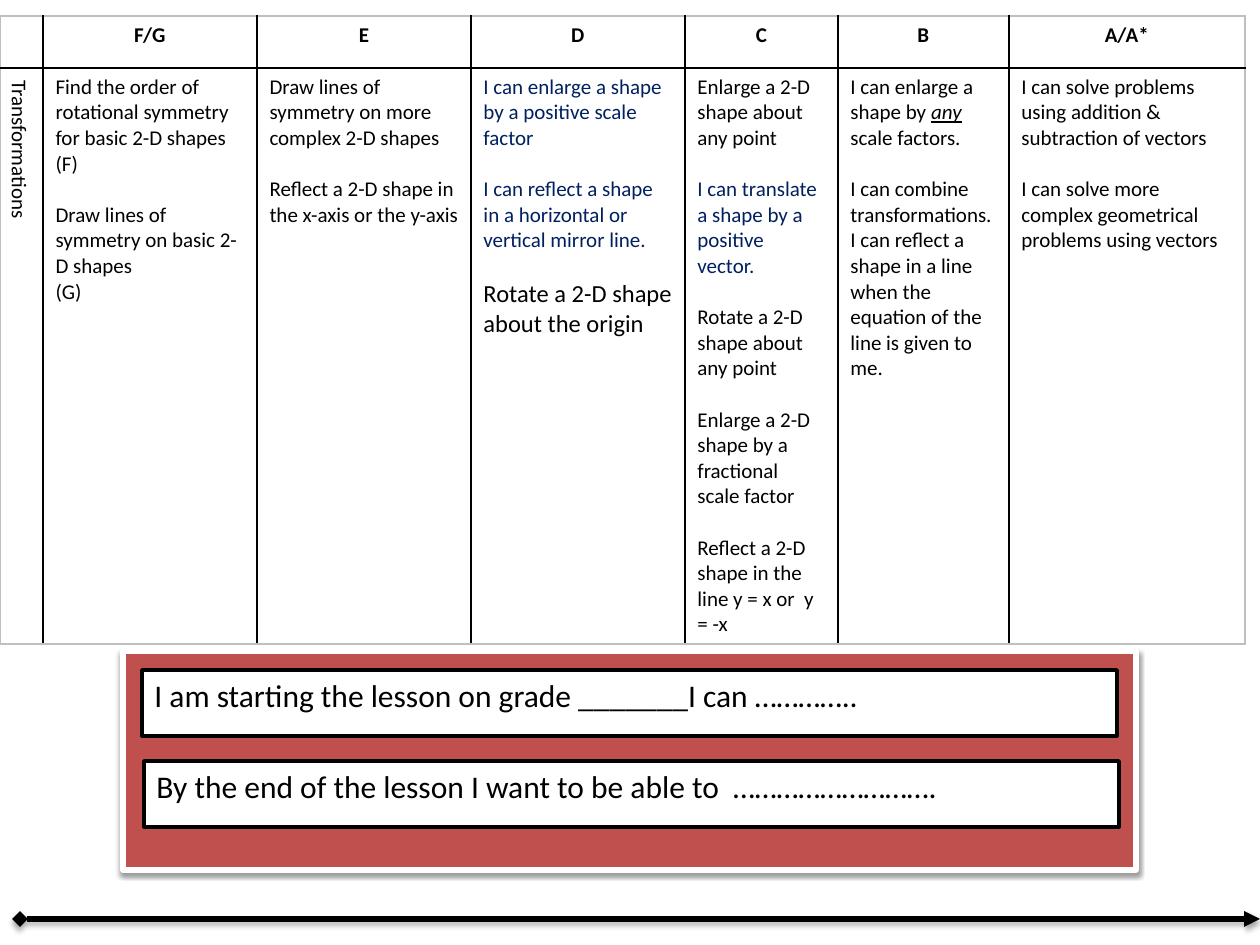
from lxml.etree import SubElement as Sub
from pptx import Presentation
from pptx.dml.color import RGBColor as Rgb
from pptx.enum.shapes import MSO_CONNECTOR as Link, MSO_SHAPE as Shape
from pptx.enum.text import MSO_ANCHOR as Anchor, PP_ALIGN as Align
from pptx.oxml.ns import qn
from pptx.util import Pt

SCALE = 914400 / 126
HUES = {"ink": "000000", "navy": "002060", "white": "FFFFFF",
        "red": "C0504D", "grey": "BFBFBF"}
FONT = "Calibri"
GAP = 14.65  # one line of 12 pt text

WIDTHS = [43, 214, 214, 214, 153, 171, 236]
HEIGHTS = [52, 576]
GRADES = ["", "F/G", "E", "D", "C", "B", "A/A*"]


def navy(text):
    return text, {"hue": "navy"}


# Each cell is a list of blocks, each block a list of lines, each line a list of runs.
GOALS = [
    [[["Transformations"]]],
    [[["Find the order of rotational symmetry for basic 2-D shapes"], ["(F)"]],
     [["Draw lines of symmetry on basic 2-D shapes"], ["(G)"]]],
    [[["Draw lines of symmetry on more complex 2-D shapes"]],
     [["Reflect a 2-D shape in the x-axis or the y-axis"]]],
    [[[navy("I can enlarge a shape by a positive scale factor")]],
     [[navy("I can reflect a shape in a horizontal or vertical mirror line.")]],
     [[("Rotate a 2-D shape about the origin", {"size": 14})]]],
    [[["Enlarge a 2-D shape about any point"]],
     [[navy("I can translate a shape by a positive vector.")]],
     [["Rotate a 2-D shape about any point"]],
     [["Enlarge a 2-D shape by a fractional scale factor"]],
     [["Reflect a 2-D shape in the line y = x or  y = -x"]]],
    [[["I can enlarge a shape by ", ("any", {"slant": True}), " scale factors."]],
     [["I can combine transformations. I can reflect a shape in a line "
       "when the equation of the line is given to me."]]],
    [[["I can solve problems using addition & subtraction of vectors"]],
     [["I can solve more complex geometrical problems using vectors"]]],
]


def px(num):
    return round(num * SCALE)


def tint(hue):
    return Rgb.from_string(HUES[hue])


def shade(item, alpha=0, blur=0, dist=0):
    """Give an item a downward shadow, or none when alpha is 0."""
    box = Sub(item._element.spPr, qn("a:effectLst"))
    if alpha:
        cast = Sub(box, qn("a:outerShdw"), blurRad=str(Pt(blur)),
                   dist=str(Pt(dist)), dir="5400000", rotWithShape="0")
        ink = Sub(cast, qn("a:srgbClr"), val=HUES["ink"])
        Sub(ink, qn("a:alpha"), val=str(alpha * 1000))


class Deck:
    def __init__(self):
        self.show = Presentation()
        self.show.slide_width, self.show.slide_height = px(1260), px(945)
        self.slide = self.show.slides.add_slide(self.show.slide_layouts[6])

    def run(self, para, text, size=12, hue="ink", bold=False, slant=False):
        run = para.add_run()
        run.text = text
        font = run.font
        font.name, font.size, font.bold = FONT, Pt(size), bold
        font.italic = font.underline = slant
        font.color.rgb = tint(hue)

    def fill(self, frame, blocks, align=Align.LEFT, **style):
        """Write blocks of lines, with a gap above every block but the first."""
        para = frame.paragraphs[0]
        for b, block in enumerate(blocks):
            for n, line in enumerate(block):
                if b or n:
                    para = frame.add_paragraph()
                para.alignment = align
                if b and not n:
                    para.space_before = Pt(GAP)
                for part in line:
                    text, more = (part, {}) if isinstance(part, str) else part
                    self.run(para, text, **{**style, **more})

    def edge(self, cell, side, hue):
        line = Sub(cell._tc.get_or_add_tcPr(), qn("a:ln" + side), w=str(Pt(1)))
        Sub(Sub(line, qn("a:solidFill")), qn("a:srgbClr"), val=HUES[hue])

    def table(self, x, y):
        rows, cols = len(HEIGHTS), len(WIDTHS)
        grid = self.slide.shapes.add_table(
            rows, cols, px(x), px(y), px(sum(WIDTHS)), px(sum(HEIGHTS))).table
        grid.first_row = grid.horz_banding = False
        for col, wide in zip(grid.columns, WIDTHS):
            col.width = px(wide)
        for row, high in zip(grid.rows, HEIGHTS):
            row.height = px(high)
        for r in range(rows):
            for c in range(cols):
                cell = grid.cell(r, c)
                outer = {"L": c == 0, "R": c == cols - 1,
                         "T": r == 0, "B": r == rows - 1}
                for side, rim in outer.items():
                    self.edge(cell, side, "grey" if rim else "ink")
                cell.fill.background()
        for c, (grade, goal) in enumerate(zip(GRADES, GOALS)):
            if grade:
                self.fill(grid.cell(0, c).text_frame, [[[grade]]],
                          Align.CENTER, bold=True)
            self.fill(grid.cell(1, c).text_frame, goal)
        grid.cell(1, 0)._tc.get_or_add_tcPr().set("vert", "vert")

    def arrow(self, x1, y1, x2, y2):
        line = self.slide.shapes.add_connector(
            Link.STRAIGHT, px(x1), px(y1), px(x2), px(y2))
        line.line.width = Pt(3)
        line.line.color.rgb = tint("ink")
        ends = line.line._get_or_add_ln()
        Sub(ends, qn("a:headEnd"), type="diamond")
        Sub(ends, qn("a:tailEnd"), type="triangle")
        shade(line, 35, 3.1, 1.8)

    def rect(self, home, x, y, w, h, fill, rim, thick):
        box = home.shapes.add_shape(Shape.RECTANGLE, px(x), px(y), px(w), px(h))
        box.shadow.inherit = False
        box.fill.solid()
        box.fill.fore_color.rgb = tint(fill)
        box.line.color.rgb = tint(rim)
        box.line.width = Pt(thick)
        return box

    def panel(self, x, y, w, h, notes):
        """Group a shaded red panel with its white answer boxes."""
        group = self.slide.shapes.add_group_shape()
        back = self.rect(group, x, y, w, h, "red", "white", 3)
        back._element.spPr.remove(back._element.spPr.find(qn("a:effectLst")))
        shade(back, 38, 3.1, 1.6)
        for left, top, text in notes:
            box = self.rect(group, left, top, 975, 66, "white", "ink", 2)
            frame = box.text_frame
            frame.word_wrap = True
            frame.vertical_anchor = Anchor.TOP
            self.fill(frame, [[[text]]], size=18)


def main():
    deck = Deck()
    deck.table(0, 16)
    deck.arrow(20, 919, 1260, 919)
    deck.panel(123, 651, 1013, 219, [
        (142, 670, "I am starting the lesson on grade _______I can ………….."),
        (144, 761, "By the end of the lesson I want to be able to  ………………………."),
    ])
    deck.show.save("out.pptx")


if __name__ == "__main__":
    main()
